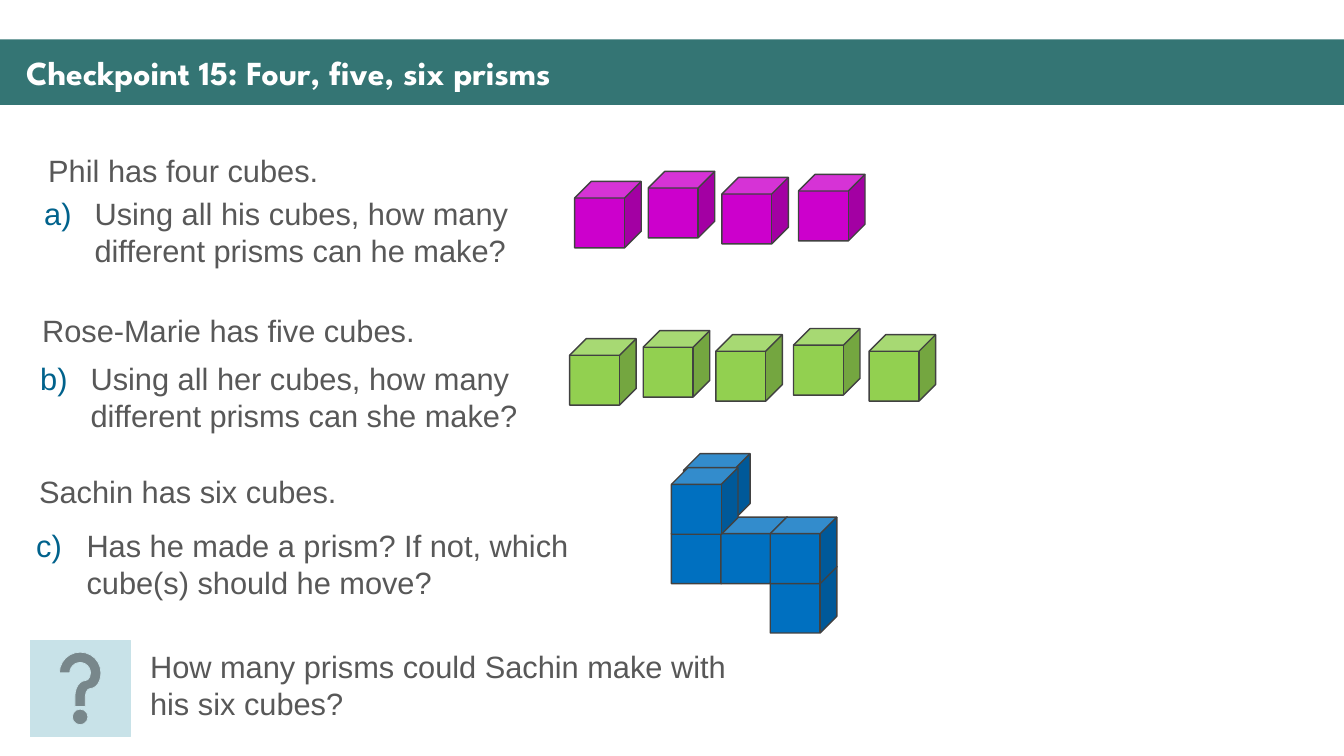
from dataclasses import dataclass
from typing import Any, NamedTuple

import lxml.etree
import pptx
import pptx.dml.color
import pptx.enum.shapes
import pptx.enum.text
import pptx.oxml.ns
import pptx.shapes.autoshape
import pptx.slide
import pptx.util

# Grid: square cells, 13.33 columns by 7.5 rows
COLUMNS, ROWS = 13.33, 7.5
CELL = pptx.util.Inches(1)


@dataclass(frozen=True)
class Theme:
    banner: str = "347574"
    title: str = "FFFFFF"
    body: str = "585858"
    marker: str = "00628C"
    outline: str = "414141"
    help_button: str = "C8E2E8"
    phil: str = "CC00CC"
    rose_marie: str = "92D050"
    sachin: str = "0070C0"
    title_font: str = "League Spartan"
    body_font: str = "Arial"
    title_size: float = 24
    body_size: float = 22
    outline_width: float = 1
    button_line_width: float = 0.5


THEME = Theme()
SHAPES = pptx.enum.shapes.MSO_SHAPE
TITLE_FORMAT = {"name": THEME.title_font, "size": pptx.util.Pt(THEME.title_size), "bold": True}
BODY_FORMAT = {"name": THEME.body_font, "size": pptx.util.Pt(THEME.body_size)}


class Area(NamedTuple):
    column: float
    row: float
    columns: float
    rows: float


class Statement(NamedTuple):
    area: Area
    text: str
    letter: int = 0  # place in a), b), c); 0 means no marker


class CubeSet(NamedTuple):
    color: str
    corners: list[tuple[float, float]]


# Content
BANNER = Area(0, 0.39, COLUMNS, 0.65)
TITLE = Statement(Area(0.16, 0.48, 13.04, 0.47), "Checkpoint 15: Four, five, six prisms")
HELP_BUTTON = Area(0.3, 6.35, 0.99, 0.96)

STATEMENTS = [
    Statement(Area(0.38, 1.46, 3.18, 0.47), "Phil has four cubes."),
    Statement(Area(0.34, 1.88, 5.46, 0.84),
              "Using all his cubes, how many different prisms can he make?", 1),
    Statement(Area(0.32, 3.04, 4.16, 0.47), "Rose-Marie has five cubes."),
    Statement(Area(0.3, 3.52, 5.22, 0.84),
              "Using all her cubes, how many different prisms can she make?", 2),
    Statement(Area(0.29, 4.64, 3.94, 0.47), "Sachin has six cubes."),
    Statement(Area(0.26, 5.18, 5.75, 0.84),
              "Has he made a prism? If not, which cube(s) should he move?", 3),
    Statement(Area(1.39, 6.38, 5.95, 0.84),
              "How many prisms could Sachin make with his six cubes?"),
]

# Sachin's cubes stand on a lattice: (across, down, behind), back to front
CUBE, FACE = 0.66, 0.49
LATTICE_LEFT, LATTICE_TOP = 6.66, 4.64
BEHIND_RIGHT, BEHIND_UP = 0.12, 0.14
SACHIN_LATTICE = [(0, 0, 1), (0, 1, 0), (1, 1, 0), (0, 0, 0), (2, 2, 0), (2, 1, 0)]

CUBE_SETS = [
    CubeSet(THEME.phil, [(5.7, 1.8), (6.43, 1.7), (7.16, 1.76), (7.92, 1.73)]),
    CubeSet(THEME.rose_marie,
            [(5.65, 3.36), (6.38, 3.28), (7.1, 3.32), (7.87, 3.26), (8.62, 3.32)]),
    CubeSet(THEME.sachin,
            [(LATTICE_LEFT + across * FACE + behind * BEHIND_RIGHT,
              LATTICE_TOP + down * FACE - behind * BEHIND_UP)
             for across, down, behind in SACHIN_LATTICE]),
]


# Drawing
def rgb(color: str) -> pptx.dml.color.RGBColor:
    return pptx.dml.color.RGBColor.from_string(color)


def place(area: Area) -> list[int]:
    return [round(length * CELL) for length in area]


def apply_format(target: Any, values: dict[str, Any]) -> None:
    for attribute, value in values.items():
        setattr(target, attribute, value)


def add_solid(slide: pptx.slide.Slide, kind: SHAPES, area: Area, fill: str,
              outline: str = "", width: float = 0) -> None:
    solid = slide.shapes.add_shape(kind, *place(area))
    solid.shadow.inherit = False
    solid.fill.solid()
    solid.fill.fore_color.rgb = rgb(fill)
    if outline:
        solid.line.color.rgb = rgb(outline)
        solid.line.width = pptx.util.Pt(width)
    else:
        solid.line.fill.background()


def add_marker(paragraph: Any, letter: int) -> None:
    properties = paragraph._p.get_or_add_pPr()
    indent = round(0.5 * CELL)
    properties.set("marL", str(indent))
    properties.set("indent", str(-indent))
    qn = pptx.oxml.ns.qn
    color = lxml.etree.SubElement(properties, qn("a:buClr"))
    lxml.etree.SubElement(color, qn("a:srgbClr"), val=THEME.marker)
    lxml.etree.SubElement(properties, qn("a:buFont"), typeface=THEME.body_font)
    lxml.etree.SubElement(properties, qn("a:buAutoNum"),
                          type="alphaLcParenR", startAt=str(letter))


def add_statement(slide: pptx.slide.Slide, statement: Statement, color: str,
                  font_format: dict[str, Any], frame_format: dict[str, Any]) -> None:
    frame = slide.shapes.add_textbox(*place(statement.area)).text_frame
    apply_format(frame, {"word_wrap": True, **frame_format})
    paragraph = frame.paragraphs[0]
    if statement.letter:
        add_marker(paragraph, statement.letter)
    wording = paragraph.add_run()
    wording.text = statement.text
    apply_format(wording.font, font_format)
    wording.font.color.rgb = rgb(color)


def main() -> None:
    deck = pptx.Presentation()
    deck.slide_width, deck.slide_height = round(COLUMNS * CELL), round(ROWS * CELL)
    slide = deck.slides.add_slide(deck.slide_layouts[6])

    # Banner and title
    add_solid(slide, SHAPES.RECTANGLE, BANNER, THEME.banner)
    add_statement(slide, TITLE, THEME.title, TITLE_FORMAT,
                  {"vertical_anchor": pptx.enum.text.MSO_ANCHOR.MIDDLE})

    # Cubes
    for cube_set in CUBE_SETS:
        for column, row in cube_set.corners:
            add_solid(slide, SHAPES.CUBE, Area(column, row, CUBE, CUBE),
                      cube_set.color, THEME.outline, THEME.outline_width)

    # Questions
    add_solid(slide, SHAPES.ACTION_BUTTON_HELP, HELP_BUTTON, THEME.help_button,
              THEME.help_button, THEME.button_line_width)
    for statement in STATEMENTS:
        add_statement(slide, statement, THEME.body, BODY_FORMAT,
                      {"auto_size": pptx.enum.text.MSO_AUTO_SIZE.SHAPE_TO_FIT_TEXT})

    deck.save("out.pptx")


if __name__ == "__main__":
    main()
